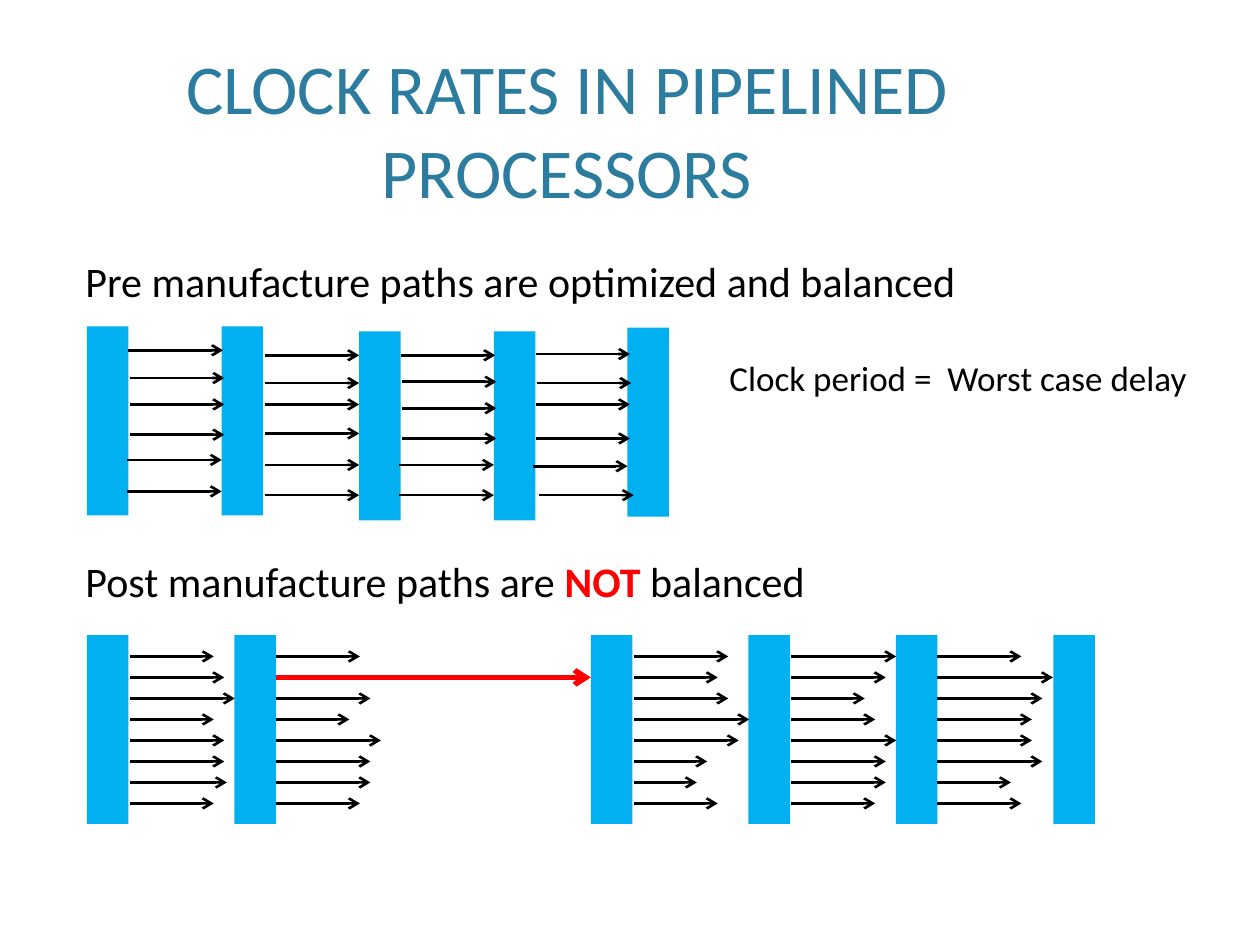
from typing import NamedTuple

from lxml import etree
from pptx import Presentation
from pptx.dml.color import RGBColor
from pptx.enum import shapes, text
from pptx.oxml.ns import qn
from pptx.util import Inches, Pt

COLORS = {"title": "2C7C9F", "text": "000000", "register": "00B0F0", "critical": "FF0000"}
FONT = "Calibri"
REGISTER_WIDTH, REGISTER_HEIGHT = 0.33, 1.5
BALANCED_LENGTH = 0.75
UNBALANCED_TOP = 5.04
FIRST_PATH_TOP, PATH_GAP = 5.21, 1 / 6
LENGTH_UNIT = 1 / 12
CRITICAL_LENGTH = 30


class Register(NamedTuple):
    left: float
    top: float


class Path(NamedTuple):
    left: float
    top: float
    length: float
    color: str = "text"
    weight: float = 1.5


class Stage(NamedTuple):
    left: float
    lengths: tuple[float, ...]


BALANCED_REGISTERS = [
    Register(0.69, 2.59), Register(1.76, 2.59), Register(2.85, 2.63),
    Register(3.92, 2.63), Register(4.98, 2.6),
]
BALANCED_STARTS = [
    (1.02, 2.78), (1.03, 3), (1.03, 3.21), (1.03, 3.45), (1.01, 3.65), (1.01, 3.9),
    (2.1, 2.82), (2.1, 3.04), (2.1, 3.21), (2.1, 3.44), (2.1, 3.69), (2.1, 3.93),
    (3.18, 2.82), (3.19, 3.03), (3.19, 3.24), (3.19, 3.48), (3.17, 3.69), (3.17, 3.93),
    (4.25, 2.81), (4.26, 3.04), (4.25, 3.21), (4.25, 3.48), (4.23, 3.7), (4.28, 3.93),
]
UNBALANCED_REGISTERS = [
    Register(left, UNBALANCED_TOP) for left in (0.69, 1.86, 4.69, 5.94, 7.11, 8.36)
]
UNBALANCED_STAGES = [
    Stage(1.03, (8, 9, 10, 8, 9, 9, 9.25, 8)),
    Stage(2.19, (8, CRITICAL_LENGTH, 9, 7, 10, 9, 9, 8)),
    Stage(5.03, (9, 8, 9, 11, 10, 7, 6, 8)),
    Stage(6.28, (10, 9, 7, 8, 10, 9, 9, 8)),
    Stage(7.44, (8, 11, 10, 9, 9, 10, 7, 8)),
]


def rgb(name: str) -> RGBColor:
    return RGBColor.from_string(COLORS[name])


def add_run(paragraph, words: str, *, size: float = 24, color: str = "text",
            bold: bool = False) -> None:
    run = paragraph.add_run()
    run.text = words
    run.font.name = FONT
    run.font.size = Pt(size)
    run.font.bold = bold
    run.font.color.rgb = rgb(color)


def add_text_box(slide, left: float, top: float, width: float, height: float):
    box = slide.shapes.add_textbox(Inches(left), Inches(top), Inches(width), Inches(height))
    box.text_frame.word_wrap = True
    box.text_frame.auto_size = text.MSO_AUTO_SIZE.SHAPE_TO_FIT_TEXT
    return box.text_frame.paragraphs[0]


def draw_register(group, register: Register) -> None:
    shape = group.shapes.add_shape(
        shapes.MSO_SHAPE.RECTANGLE, Inches(register.left), Inches(register.top),
        Inches(REGISTER_WIDTH), Inches(REGISTER_HEIGHT))
    shape.shadow.inherit = False
    shape.fill.solid()
    shape.fill.fore_color.rgb = rgb("register")
    shape.line.fill.background()


def draw_path(group, path: Path) -> None:
    top = Inches(path.top)
    connector = group.shapes.add_connector(
        shapes.MSO_CONNECTOR.STRAIGHT, Inches(path.left), top,
        Inches(path.left + path.length), top)
    connector.line.color.rgb = rgb(path.color)
    connector.line.width = Pt(path.weight)
    properties = connector.line._get_or_add_ln()
    etree.SubElement(properties, qn("a:tailEnd"), type="arrow")
    etree.SubElement(connector._element.spPr, qn("a:effectLst"))


def draw_pipeline(slide, registers: list[Register], paths: list[Path]) -> None:
    group = slide.shapes.add_group_shape()
    for register in registers:
        draw_register(group, register)
    for path in paths:
        draw_path(group, path)


def stage_paths(stage: Stage) -> list[Path]:
    paths = []
    for row, length in enumerate(stage.lengths):
        path = Path(stage.left, FIRST_PATH_TOP + row * PATH_GAP, length * LENGTH_UNIT)
        if length == CRITICAL_LENGTH:
            path = path._replace(color="critical", weight=3)
        paths.append(path)
    return paths


def add_title(slide, words: str) -> None:
    title = slide.shapes.title
    title.left, title.top = Inches(0), Inches(0.37)
    title.width, title.height = Inches(9), Inches(1.37)
    title.text_frame.vertical_anchor = text.MSO_ANCHOR.BOTTOM
    title.text_frame.auto_size = text.MSO_AUTO_SIZE.NONE
    paragraph = title.text_frame.paragraphs[0]
    paragraph.alignment = text.PP_ALIGN.CENTER
    add_run(paragraph, words, size=40, color="title")


def main() -> None:
    presentation = Presentation()
    presentation.slide_width, presentation.slide_height = Inches(10), Inches(7.5)
    slide = presentation.slides.add_slide(presentation.slide_layouts[5])
    add_title(slide, "CLOCK RATES IN PIPELINED PROCESSORS")

    post_heading = add_text_box(slide, 0.58, 4.36, 7, 0.5)
    add_run(post_heading, "Post manufacture paths are ")
    add_run(post_heading, "NOT", color="critical", bold=True)
    add_run(post_heading, " balanced")
    pre_heading = add_text_box(slide, 0.58, 1.98, 8.87, 0.5)
    add_run(pre_heading, "Pre manufacture paths are optimized and balanced")

    balanced_paths = [Path(left, top, BALANCED_LENGTH) for left, top in BALANCED_STARTS]
    draw_pipeline(slide, BALANCED_REGISTERS, balanced_paths)
    unbalanced_paths = [path for stage in UNBALANCED_STAGES for path in stage_paths(stage)]
    draw_pipeline(slide, UNBALANCED_REGISTERS, unbalanced_paths)

    clock_note = add_text_box(slide, 5.69, 2.78, 4.31, 0.44)
    add_run(clock_note, "Clock period =  Worst case delay", size=20)
    presentation.save("out.pptx")


if __name__ == "__main__":
    main()
